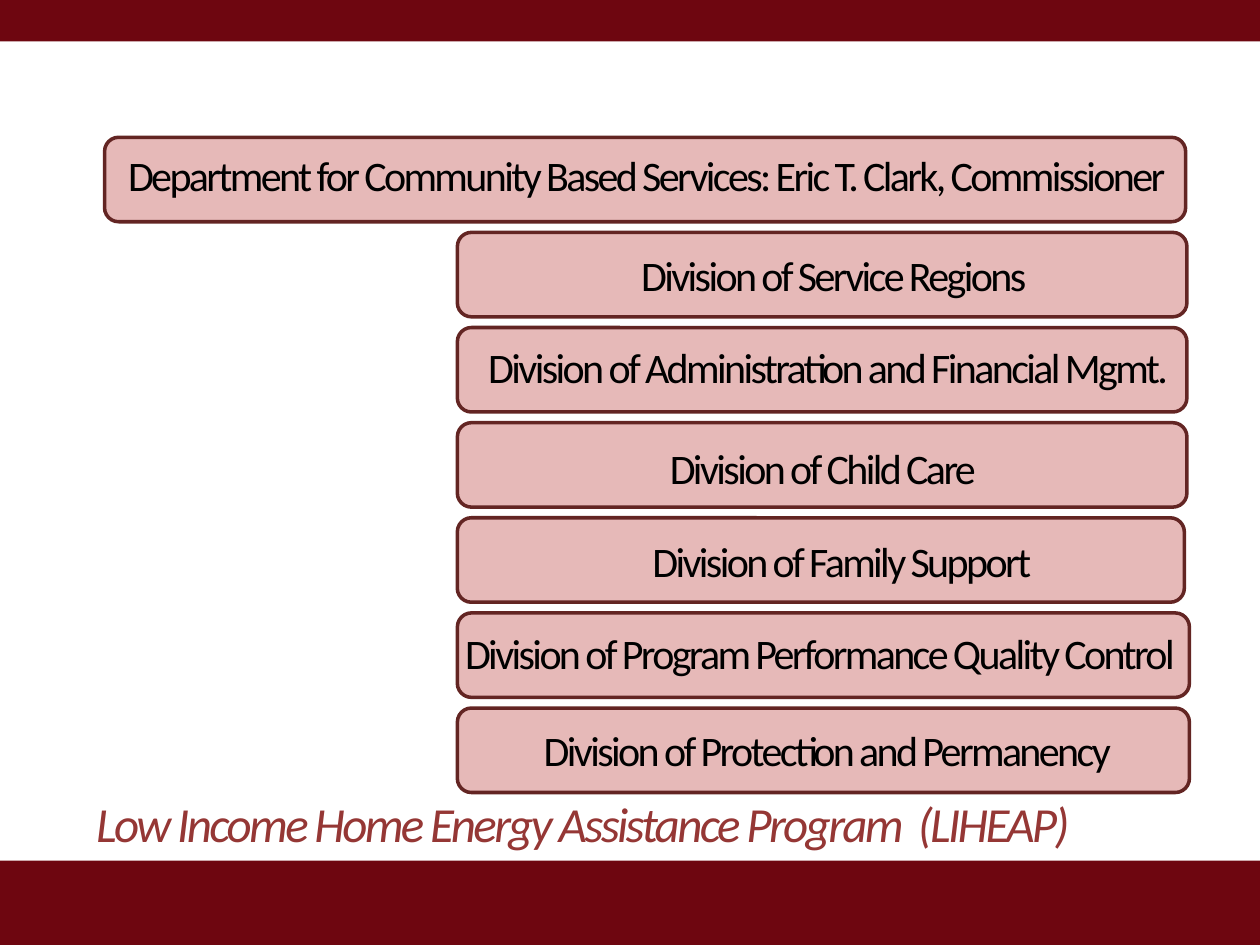
from typing import NamedTuple

from pptx import Presentation
from pptx.dml.color import RGBColor
from pptx.enum.shapes import MSO_SHAPE
from pptx.enum.text import MSO_ANCHOR, MSO_AUTO_SIZE, PP_ALIGN
from pptx.util import Inches, Pt

RECT, ROUND = MSO_SHAPE.RECTANGLE, MSO_SHAPE.ROUNDED_RECTANGLE
TOP, CENTER = MSO_ANCHOR.TOP, PP_ALIGN.CENTER
FIT, FIXED = MSO_AUTO_SIZE.SHAPE_TO_FIT_TEXT, MSO_AUTO_SIZE.NONE
DARK, PINK, EDGE, RED, BLACK = "6E0610", "E6B9B8", "632523", "953735", "000000"
FIRST, LAST = 1.09, 5.62  # tops of the first and last rows
TALL = 0.67
LABEL = {"name": "Calibri", "size": Pt(24)}
TITLE = {"name": "Calibri", "size": Pt(28), "italic": True, "bold": False}


class Row(NamedTuple):
    text: str
    left: float
    width: float
    text_left: float
    text_top: float
    text_width: float


ROWS = [
    Row("Department for Community Based Services: Eric T. Clark, Commissioner",
        0.83, 8.58, 0.67, 1.14, 8.92),
    Row("Division of Service Regions", 3.63, 5.79, 3.24, 1.93, 6.75),
    Row("Division of Administration and Financial Mgmt.",
        3.63, 5.79, 2.36, 2.66, 8.42),
    Row("Division of Child Care", 3.63, 5.79, 3.28, 3.46, 6.5),
    Row("Division of Family Support", 3.63, 5.77, 3.63, 4.2, 6.1),
    Row("Division of Program Performance Quality Control",
        3.63, 5.81, 3.5, 4.93, 6.01),
    Row("Division of Protection and Permanency", 3.63, 5.81, 3.7, 5.7, 5.73),
]


def color(code: str) -> RGBColor:
    return RGBColor.from_string(code)


def write(frame, text: str, style: dict, ink: str, fit) -> None:
    """Put one centred, tightly spaced line in a text frame."""
    frame.word_wrap = True
    frame.auto_size = fit
    frame.vertical_anchor = TOP
    para = frame.paragraphs[0]
    para.alignment = CENTER
    run = para.add_run()
    run.text = text
    for key, value in style.items():
        setattr(run.font, key, value)
    run.font.color.rgb = color(ink)
    run.font._element.set("spc", "-150")


def block(slide, kind, left: float, top: float, width: float, height: float,
          fill: str, edge: str = "") -> None:
    """Draw a filled shape, outlined when an edge colour is given."""
    shape = slide.shapes.add_shape(
        kind, Inches(left), Inches(top), Inches(width), Inches(height))
    shape.shadow.inherit = False
    shape.fill.solid()
    shape.fill.fore_color.rgb = color(fill)
    if edge:
        shape.line.color.rgb = color(edge)
        shape.line.width = Pt(2)
    else:
        shape.line.fill.background()


def label(slide, row: Row) -> None:
    box = slide.shapes.add_textbox(
        Inches(row.text_left), Inches(row.text_top),
        Inches(row.text_width), Inches(0.5))
    write(box.text_frame, row.text, LABEL, BLACK, FIT)


def main() -> None:
    deck = Presentation()
    deck.slide_width, deck.slide_height = Inches(10), Inches(7.5)
    slide = deck.slides.add_slide(deck.slide_layouts[5])

    # Bands at the top and bottom
    block(slide, RECT, 0, 0, 10, 0.33, DARK)
    block(slide, RECT, 0, 6.83, 10, TALL, DARK)

    # Title
    title = slide.shapes.title
    place = {"left": 0, "top": 6.25, "width": 9.25, "height": 1.25}
    for key, value in place.items():
        setattr(title, key, Inches(value))
    write(title.text_frame, "Low Income Home Energy Assistance Program  (LIHEAP)",
          TITLE, RED, FIXED)

    # Department and its divisions
    step = (LAST - FIRST) / (len(ROWS) - 1)
    for i, row in enumerate(ROWS):
        block(slide, ROUND, row.left, FIRST + i * step, row.width, TALL, PINK, EDGE)
        label(slide, row)

    deck.save("out.pptx")


if __name__ == "__main__":
    main()
